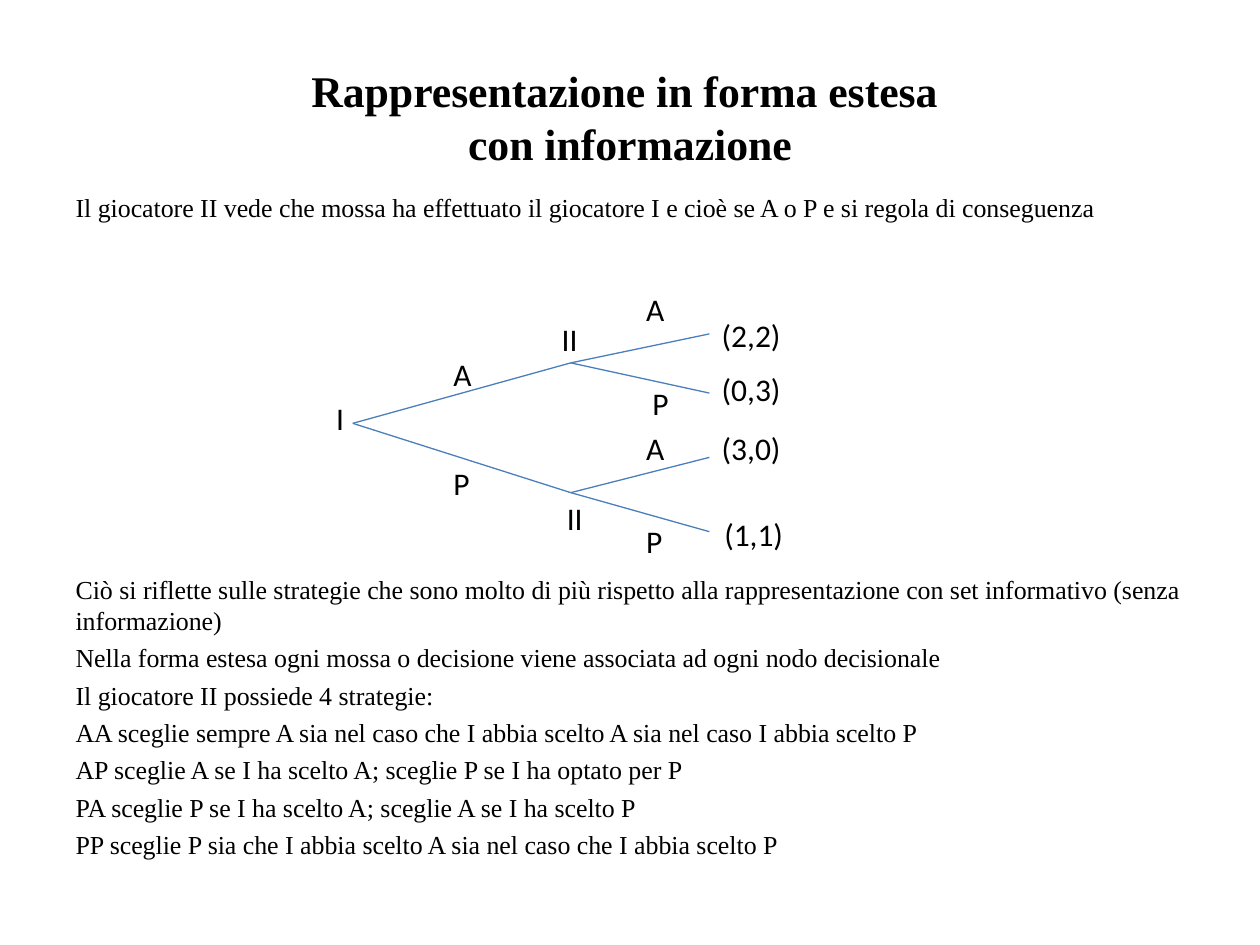
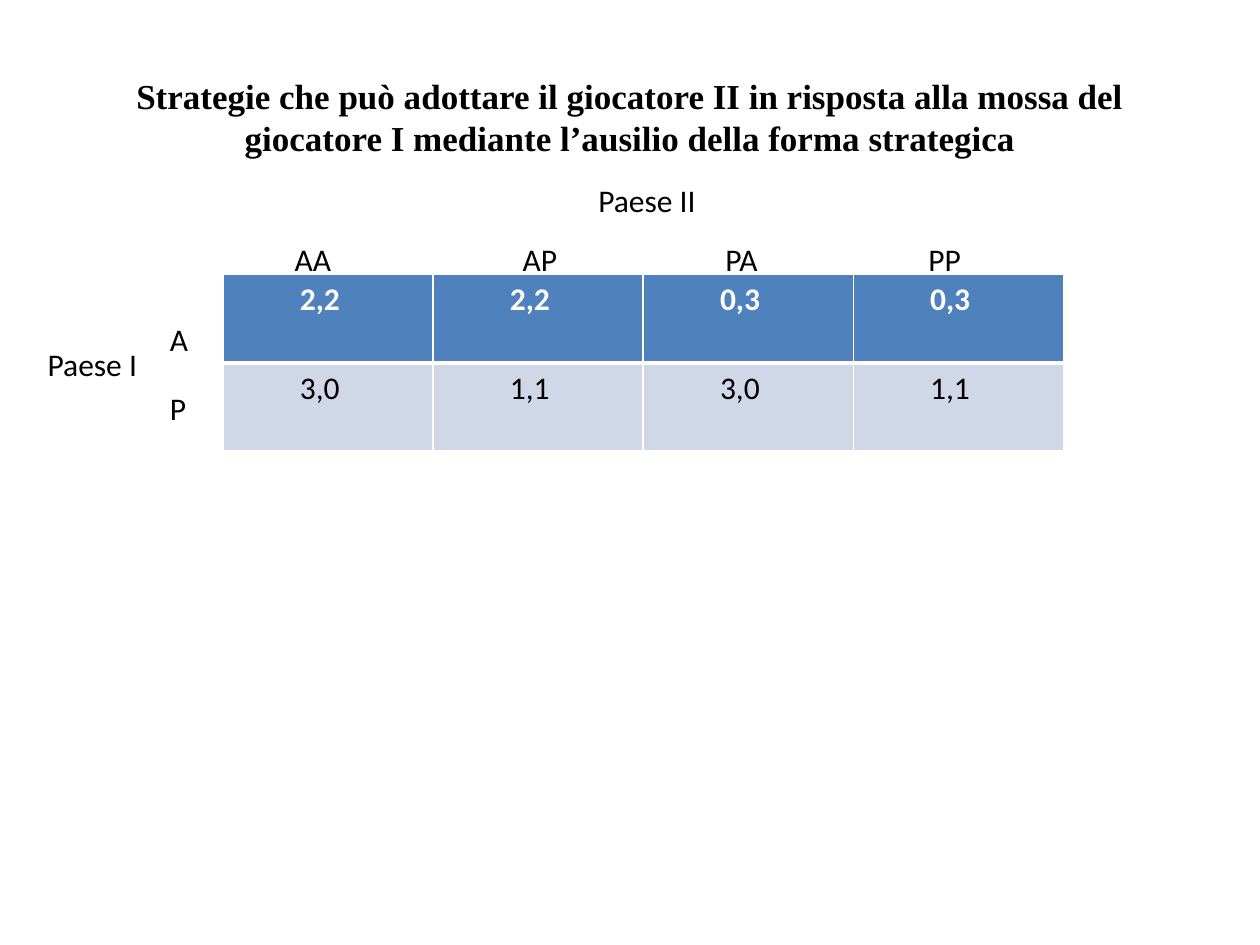
from lxml.etree import SubElement
from pptx import Presentation
from pptx.dml.color import RGBColor
from pptx.enum.shapes import MSO_CONNECTOR as CONNECTOR
from pptx.enum.text import MSO_ANCHOR as ANCHOR, MSO_AUTO_SIZE as AUTO_SIZE, PP_ALIGN as ALIGN
from pptx.oxml.ns import qn
from pptx.util import Inches, Pt

SERIF, SANS = "Times New Roman", "Calibri"
BLACK, WHITE, BRANCH_BLUE = "000000", "FFFFFF", "4B7EBC"
ROW_FILLS = ["4F81BD", "D0D8E8"]
LABEL_WIDTH, LABEL_HEIGHT = 1.2, 0.4

TREE_TITLE = "Rappresentazione in forma estesa \vcon informazione"
TREE_INTRO = ("Il giocatore II vede che mossa ha effettuato il giocatore I e cioè "
              "se A o P e si regola di conseguenza")
STRATEGIES = [
    "Ciò si riflette sulle strategie che sono molto di più rispetto alla "
    "rappresentazione con set informativo (senza informazione)",
    "Nella forma estesa ogni mossa o decisione viene associata ad ogni nodo decisionale",
    "Il giocatore II possiede 4 strategie:",
    "AA sceglie sempre A sia nel caso che I abbia scelto A sia nel caso I abbia scelto P",
    "AP sceglie A se I ha scelto A; sceglie P se I ha optato per P",
    "PA sceglie P se I ha scelto A; sceglie A se I ha scelto P",
    "PP sceglie P sia che I abbia scelto A sia nel caso che I abbia scelto P",
]
ROOT, UPPER, LOWER = (2.8, 3.36), (4.53, 2.88), (4.53, 3.91)
LEAF_X = 5.63
BRANCHES = [
    (ROOT, UPPER), (ROOT, LOWER),
    (UPPER, (LEAF_X, 2.65)), (UPPER, (LEAF_X, 3.12)),
    (LOWER, (LEAF_X, 3.63)), (LOWER, (LEAF_X, 4.22)),
]
TREE_LABELS = [
    ("I", 2.57, 3.12), ("II", 4.36, 2.49), ("II", 4.4, 3.91),
    ("A", 3.5, 2.77), ("P", 3.5, 3.63),
    ("A", 5.03, 2.25), ("P", 5.08, 3), ("A", 5.03, 3.36), ("P", 5.03, 4.09),
    ("(2,2)", LEAF_X, 2.46), ("(0,3)", LEAF_X, 2.89),
    ("(3,0)", LEAF_X, 3.36), ("(1,1)", 5.65, 4.04),
]

MATRIX_TITLE = ("Strategie che può adottare il giocatore II in risposta alla mossa del "
                "giocatore I mediante l’ausilio della forma strategica")
PAYOFFS = [["2,2", "2,2", "0,3", "0,3"], ["3,0", "1,1", "3,0", "1,1"]]
MATRIX_LABELS = [
    ("Paese II", 4.65, 1.39), ("Paese I", 0.28, 2.69),
    ("A", 1.25, 2.49), ("P", 1.25, 3.04),
    ("AA", 2.24, 1.86), ("AP", 4.05, 1.86), ("PA", 5.66, 1.86), ("PP", 7.27, 1.86),
]


def color(value):
    return RGBColor.from_string(value)


def box(left, top, width, height):
    return [Inches(length) for length in (left, top, width, height)]


def place(shape, left, top, width, height):
    shape.left, shape.top, shape.width, shape.height = box(left, top, width, height)


def style(paragraph, face, size, ink=BLACK, bold=False):
    font = paragraph.font
    font.name, font.size, font.bold = face, Pt(size), bold
    font.color.rgb = color(ink)


def add_slide(deck, layout, title, size):
    slide = deck.slides.add_slide(deck.slide_layouts[layout])
    heading = slide.shapes.title
    place(heading, 0.5, 0.3, 9, 1.25)
    frame = heading.text_frame
    frame.text = title
    frame.auto_size, frame.vertical_anchor = AUTO_SIZE.NONE, ANCHOR.MIDDLE
    frame.paragraphs[0].alignment = ALIGN.CENTER
    style(frame.paragraphs[0], SERIF, size, bold=True)
    return slide


def add_labels(slide, labels):
    for text, left, top in labels:
        label = slide.shapes.add_textbox(*box(left, top, LABEL_WIDTH, LABEL_HEIGHT))
        label.text_frame.word_wrap = True
        label.text_frame.text = text
        style(label.text_frame.paragraphs[0], SANS, 18)


def add_explanation(slide):
    body = slide.placeholders[1]
    place(body, 0.5, 1.47, 9, 5.23)
    frame = body.text_frame
    frame.text = "\n".join([TREE_INTRO, *STRATEGIES])
    frame.auto_size = AUTO_SIZE.NONE
    for paragraph in frame.paragraphs:
        style(paragraph, SERIF, 14.8)
        paragraph.space_before = Pt(3.6)
        properties = paragraph._p.get_or_add_pPr()
        properties.set("marL", "0")
        properties.set("indent", "0")
        properties.insert_element_before(
            properties.makeelement(qn("a:buNone")), "a:tabLst", "a:defRPr", "a:extLst")
    frame.paragraphs[1].space_before = Pt(200.5)


def add_branches(slide):
    for start, end in BRANCHES:
        branch = slide.shapes.add_connector(CONNECTOR.STRAIGHT, *map(Inches, start + end))
        branch.line.color.rgb = color(BRANCH_BLUE)
        branch.line.width = Pt(0.75)
        SubElement(branch._element.spPr, qn("a:effectLst"))


def set_borders(cell, widths):
    properties = cell._tc.get_or_add_tcPr()
    for position, (side, width) in enumerate(widths.items()):
        border = properties.makeelement(qn(f"a:{side}"), {"w": str(Pt(width))})
        fill = SubElement(border, qn("a:solidFill"))
        SubElement(fill, qn("a:srgbClr"), {"val": WHITE})
        properties.insert(position, border)


def add_matrix(slide):
    rows, columns = len(PAYOFFS), len(PAYOFFS[0])
    matrix = slide.shapes.add_table(rows, columns, *box(1.77, 2.18, 6.67, 1.4)).table
    for r, payoffs in enumerate(PAYOFFS):
        header = r == 0
        for c, payoff in enumerate(payoffs):
            cell = matrix.cell(r, c)
            cell.text = payoff
            cell.margin_left = Inches(0.61)
            cell.fill.solid()
            cell.fill.fore_color.rgb = color(ROW_FILLS[r])
            style(cell.text_frame.paragraphs[0], SANS, 18, WHITE if header else BLACK, header)
            set_borders(cell, {"lnL": 1, "lnR": 1, "lnT": 1 if header else 3,
                               "lnB": 3 if header else 1})


def main():
    deck = Presentation()
    deck.slide_width, deck.slide_height = Inches(10), Inches(7.5)

    tree = add_slide(deck, 1, TREE_TITLE, 25)
    add_explanation(tree)
    add_branches(tree)
    add_labels(tree, TREE_LABELS)

    strategic = add_slide(deck, 5, MATRIX_TITLE, 20)
    add_matrix(strategic)
    add_labels(strategic, MATRIX_LABELS)

    deck.save("out.pptx")


if __name__ == "__main__":
    main()
